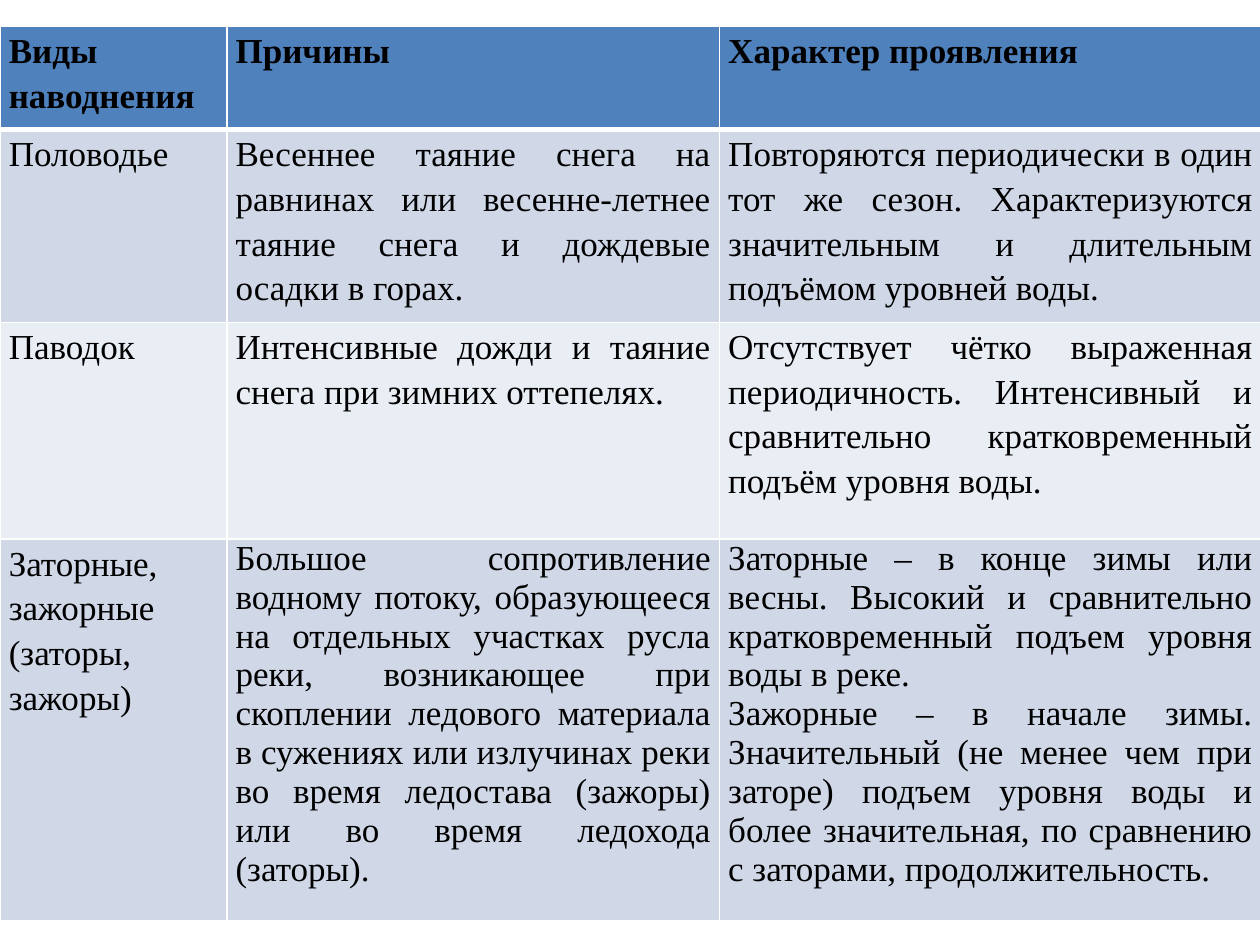
"""Build a slide with a table of flood types, their causes and their character."""
from lxml.etree import SubElement
from pptx import Presentation
from pptx.dml.color import RGBColor
from pptx.enum.text import PP_ALIGN
from pptx.oxml.ns import qn
from pptx.util import Inches, Pt

WHITE = RGBColor(0xFF, 0xFF, 0xFF)
BLACK = RGBColor(0, 0, 0)
HEADER_BLUE = RGBColor(0x4F, 0x81, 0xBD)
BANDS = [RGBColor(0xE9, 0xED, 0xF4), RGBColor(0xD0, 0xD8, 0xE8)]

FONT = "Times New Roman"
TABLE_TOP = 0.21
COLUMN_WIDTHS = [1.8, 3.91, 4.3]
ROW_HEIGHTS = [0.82, 1.53, 1.72, 3.03]
WIDE_SPACING = 1.15
SINGLE_SPACED = {(3, 1), (3, 2)}

FLOODS = [
    [["Виды ", "наводнения"], ["Причины "], ["Характер проявления "]],
    [
        ["Половодье "],
        ["Весеннее таяние снега на равнинах или весенне-летнее таяние снега "
         "и дождевые осадки в горах. "],
        ["Повторяются периодически в один тот же сезон. Характеризуются "
         "значительным и длительным подъёмом уровней воды. "],
    ],
    [
        ["Паводок "],
        ["Интенсивные дожди и таяние снега при зимних оттепелях. "],
        ["Отсутствует чётко выраженная периодичность. Интенсивный и "
         "сравнительно кратковременный подъём уровня воды. "],
    ],
    [
        ["Заторные, зажорные (заторы, зажоры) "],
        ["Большое сопротивление водному потоку, образующееся на отдельных "
         "участках русла реки, возникающее при скоплении ледового материала "
         "в сужениях или излучинах реки во время ледостава (зажоры) или "
         "во время ледохода (заторы). "],
        ["Заторные – в конце зимы или весны. Высокий и сравнительно "
         "кратковременный подъем уровня воды в реке. ",
         "Зажорные – в начале зимы. Значительный (не менее чем при заторе) "
         "подъем уровня воды и более значительная, по сравнению с заторами, "
         "продолжительность. "],
    ],
]


def set_borders(cell, row):
    widths = {"lnL": 1, "lnR": 1, "lnT": 3 if row == 1 else 1, "lnB": 3 if row == 0 else 1}
    properties = cell._tc.get_or_add_tcPr()
    for side, width in widths.items():
        line = SubElement(properties, qn(f"a:{side}"), w=str(Pt(width)))
        fill = SubElement(line, qn("a:solidFill"))
        SubElement(fill, qn("a:srgbClr"), val=str(WHITE))


def write_cell(cell, paragraphs, spacing, bold):
    cell.margin_left = cell.margin_right = Inches(0.07)
    cell.margin_top = cell.margin_bottom = 0
    frame = cell.text_frame
    for index, text in enumerate(paragraphs):
        para = frame.add_paragraph() if index else frame.paragraphs[0]
        para.alignment = PP_ALIGN.JUSTIFY
        para.line_spacing = spacing
        span = para.add_run()
        span.text = text
        span.font.name = FONT
        span.font.size = Pt(20)
        span.font.bold = bold
        span.font.color.rgb = BLACK


def main():
    deck = Presentation()
    deck.slide_width, deck.slide_height = Inches(10), Inches(7.5)
    page = deck.slides.add_slide(deck.slide_layouts[6])
    table = page.shapes.add_table(
        len(ROW_HEIGHTS), len(COLUMN_WIDTHS), 0, Inches(TABLE_TOP),
        deck.slide_width, Inches(sum(ROW_HEIGHTS)),
    ).table
    for column, width in zip(table.columns, COLUMN_WIDTHS):
        column.width = Inches(width)
    for table_row, height in zip(table.rows, ROW_HEIGHTS):
        table_row.height = Inches(height)

    for row, entries in enumerate(FLOODS):
        for column, paragraphs in enumerate(entries):
            cell = table.cell(row, column)
            spacing = 1.0 if (row, column) in SINGLE_SPACED else WIDE_SPACING
            write_cell(cell, paragraphs, spacing, bold=row == 0)
            set_borders(cell, row)
            cell.fill.solid()
            cell.fill.fore_color.rgb = BANDS[row % 2] if row else HEADER_BLUE
    deck.save("out.pptx")


if __name__ == "__main__":
    main()
